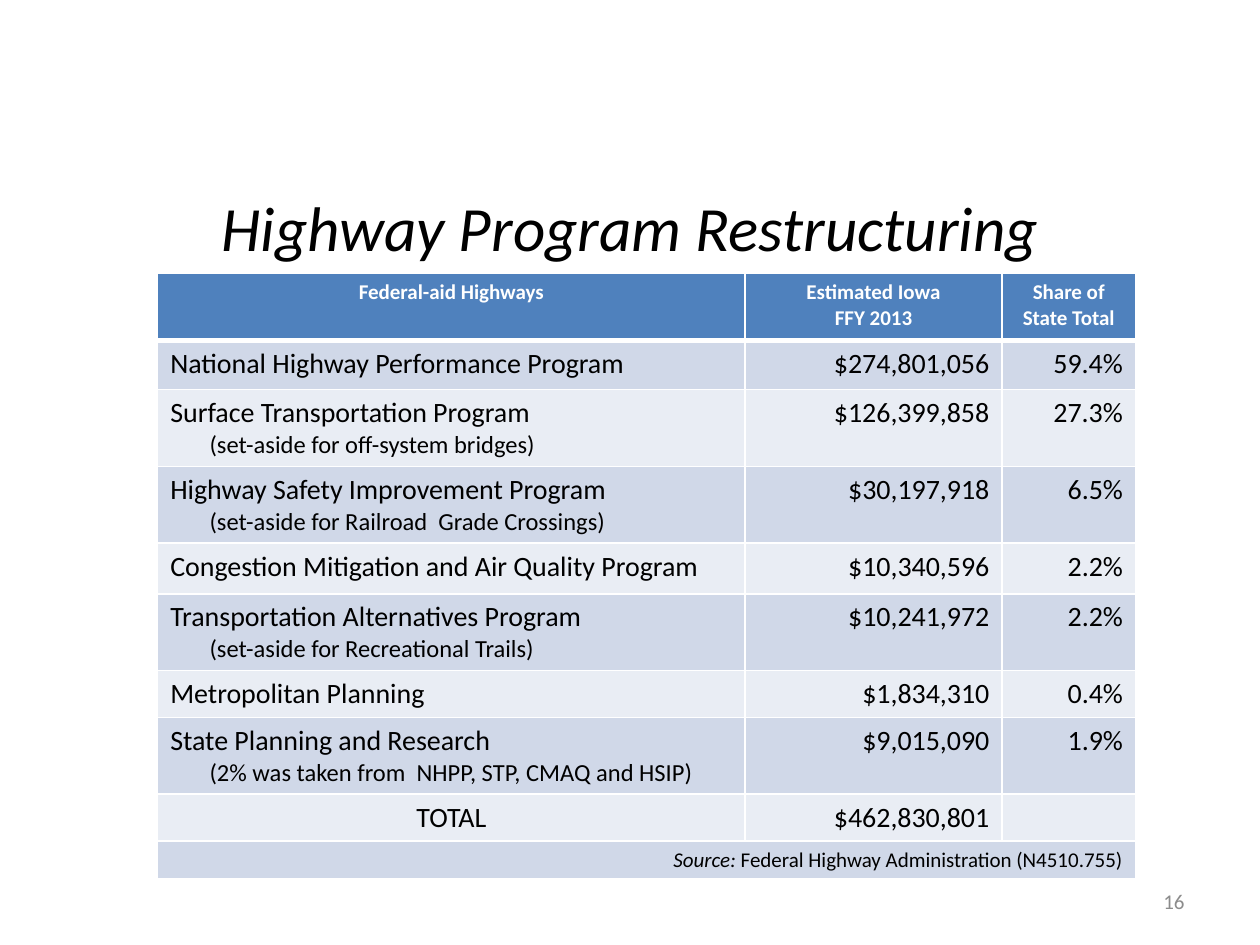
from lxml.etree import SubElement
from pptx import Presentation
from pptx.dml.color import RGBColor
from pptx.enum.text import MSO_ANCHOR as Anchor, PP_ALIGN as Align
from pptx.oxml.ns import qn
from pptx.util import Cm, Pt

COLUMN_WIDTHS = [11.84, 5.18, 2.69]
HEADER_HEIGHT, SOURCE_HEIGHT = 1.35, 0.76

HEADINGS = [["Federal-aid Highways"], ["Estimated Iowa", "FFY 2013"], ["Share of State Total"]]
PROGRAMS = [
    (0.99, "National Highway Performance Program", None, "$274,801,056", "59.4%"),
    (1.55, "Surface Transportation Program", "(set-aside for off-system bridges)",
     "$126,399,858", "27.3%"),
    (1.55, "Highway Safety Improvement Program", "(set-aside for Railroad  Grade Crossings)",
     "$30,197,918", "6.5%"),
    (1.02, "Congestion Mitigation and Air Quality Program", None, "$10,340,596", "2.2%"),
    (1.55, "Transportation Alternatives Program", "(set-aside for Recreational Trails)",
     "$10,241,972", "2.2%"),
    (0.94, "Metropolitan Planning", None, "$1,834,310", "0.4%"),
    (1.55, "State Planning and Research", "(2% was taken from  NHPP, STP, CMAQ and HSIP)",
     "$9,015,090", "1.9%"),
    (0.94, "TOTAL", None, "$462,830,801", None),
]


def color(value):
    return RGBColor.from_string(value)


class SlideBuilder:
    font_name = "Calibri"
    black, white, gray = "000000", "FFFFFF", "8C8C8C"
    header_fill = "4F81BD"
    bands = ["D0D8E8", "E9EDF4"]

    def __init__(self, slide):
        self.slide = slide

    def run(self, paragraph, text, size, ink=black, bold=False, italic=False):
        run = paragraph.add_run()
        run.text = text
        font = run.font
        font.name, font.size = self.font_name, Pt(size)
        font.bold, font.italic = bold, italic
        font.color.rgb = color(ink)

    def text(self, left, top, width, height, text, size, align, **style):
        shape = self.slide.shapes.add_textbox(Cm(left), Cm(top), Cm(width), Cm(height))
        frame = shape.text_frame
        frame.word_wrap = True
        frame.vertical_anchor = Anchor.MIDDLE
        paragraph = frame.paragraphs[0]
        paragraph.alignment = align
        self.run(paragraph, text, size, **style)

    def table(self, left, top, widths, heights):
        shape = self.slide.shapes.add_table(len(heights), len(widths), Cm(left), Cm(top),
                                            Cm(sum(widths)), Cm(sum(heights)))
        table = shape.table
        table.horz_banding = False
        for column, width in zip(table.columns, widths):
            column.width = Cm(width)
        for row, height in zip(table.rows, heights):
            row.height = Cm(height)
        for index, row in enumerate(table.rows):
            for cell in row.cells:
                self.borders(cell, top=3 if index == 1 else 1, bottom=3 if index == 0 else 1)
                cell.fill.solid()
                fill = self.bands[(index - 1) % 2] if index else self.header_fill
                cell.fill.fore_color.rgb = color(fill)
        return table

    def borders(self, cell, top, bottom):
        properties = cell._tc.get_or_add_tcPr()
        for side, width in (("L", 1), ("R", 1), ("T", top), ("B", bottom)):
            line = SubElement(properties, qn(f"a:ln{side}"), w=str(Pt(width)))
            fill = SubElement(line, qn("a:solidFill"))
            SubElement(fill, qn("a:srgbClr"), val=self.white)

    def cell(self, cell, paragraphs, align):
        frame = cell.text_frame
        for index, runs in enumerate(paragraphs):
            paragraph = frame.add_paragraph() if index else frame.paragraphs[0]
            paragraph.alignment = align
            for text, size, style in runs:
                self.run(paragraph, text, size, **style)

    def indent(self, paragraph, distance):
        paragraph._p.get_or_add_pPr().set("marL", str(Cm(distance)))

    def empty_cell(self, cell, size):
        paragraph = cell.text_frame.paragraphs[0]
        SubElement(paragraph._p, qn("a:endParaRPr"), sz=str(size * 100))


def main():
    presentation = Presentation()
    presentation.slide_width, presentation.slide_height = Cm(25.4), Cm(19.05)
    builder = SlideBuilder(presentation.slides.add_slide(presentation.slide_layouts[6]))

    builder.text(1.27, 3.61, 22.86, 1.9, "Highway Program Restructuring", 36, Align.CENTER,
                 italic=True)

    heights = [HEADER_HEIGHT, *(program[0] for program in PROGRAMS), SOURCE_HEIGHT]
    table = builder.table(3.18, 5.51, COLUMN_WIDTHS, heights)

    heading_style = {"ink": builder.white, "bold": True}
    for column, lines in enumerate(HEADINGS):
        builder.cell(table.cell(0, column), [[(line, 12, heading_style)] for line in lines],
                     Align.CENTER)

    for row, (_, name, note, amount, share) in enumerate(PROGRAMS, 1):
        name_cell = table.cell(row, 0)
        lines = [[(name, 16, {})]] + ([[(note, 14, {})]] if note else [])
        builder.cell(name_cell, lines, Align.CENTER if name == "TOTAL" else Align.LEFT)
        if note:
            builder.indent(name_cell.text_frame.paragraphs[1], 0.79)
        builder.cell(table.cell(row, 1), [[(amount, 16, {})]], Align.RIGHT)
        if share:
            builder.cell(table.cell(row, 2), [[(share, 16, {})]], Align.RIGHT)
        else:
            builder.empty_cell(table.cell(row, 2), 16)

    last = len(heights) - 1
    source_cell = table.cell(last, 0)
    source_cell.merge(table.cell(last, 2))
    builder.cell(source_cell, [[("Source: ", 12, {"italic": True}),
                                ("Federal Highway Administration (N4510.755)", 12, {})]],
                 Align.RIGHT)
    for column in (1, 2):
        builder.empty_cell(table.cell(last, column), 12)

    builder.text(18.2, 17.66, 5.93, 1.01, "16", 12, Align.RIGHT, ink=builder.gray)
    presentation.save("out.pptx")


if __name__ == "__main__":
    main()
